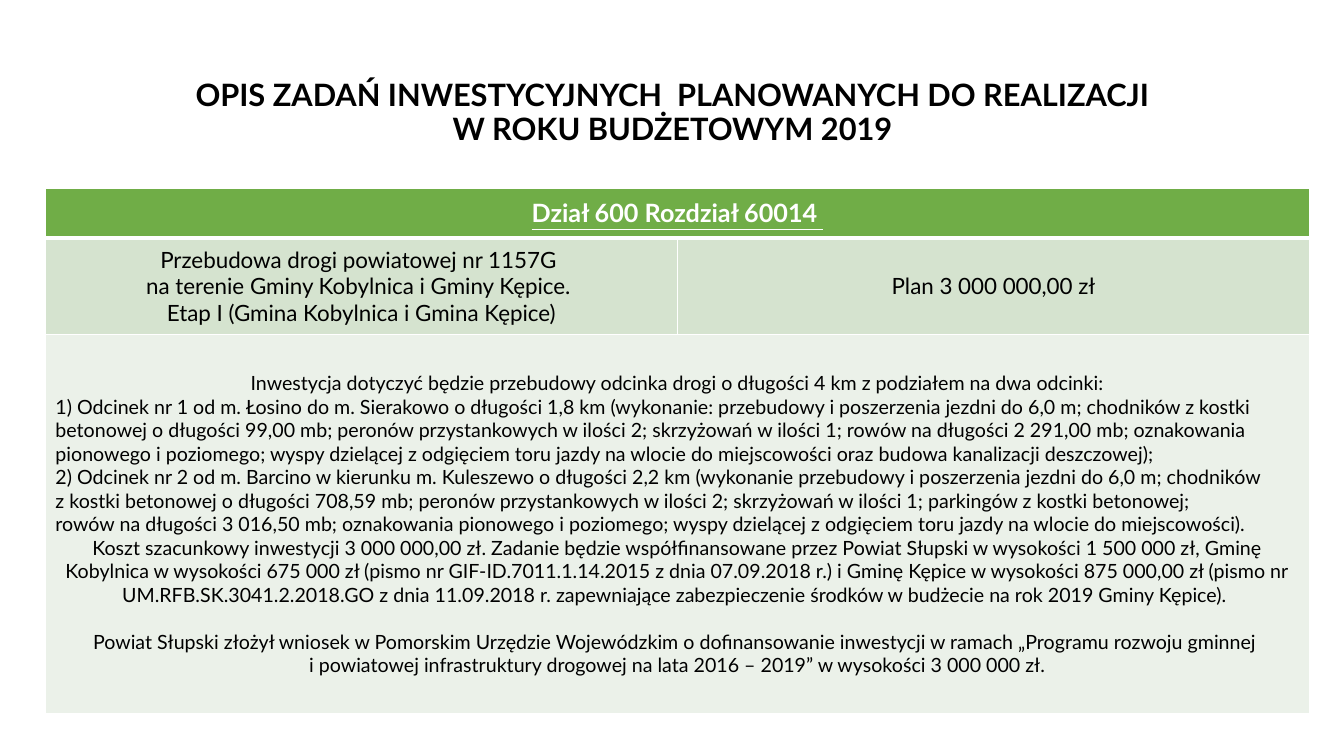
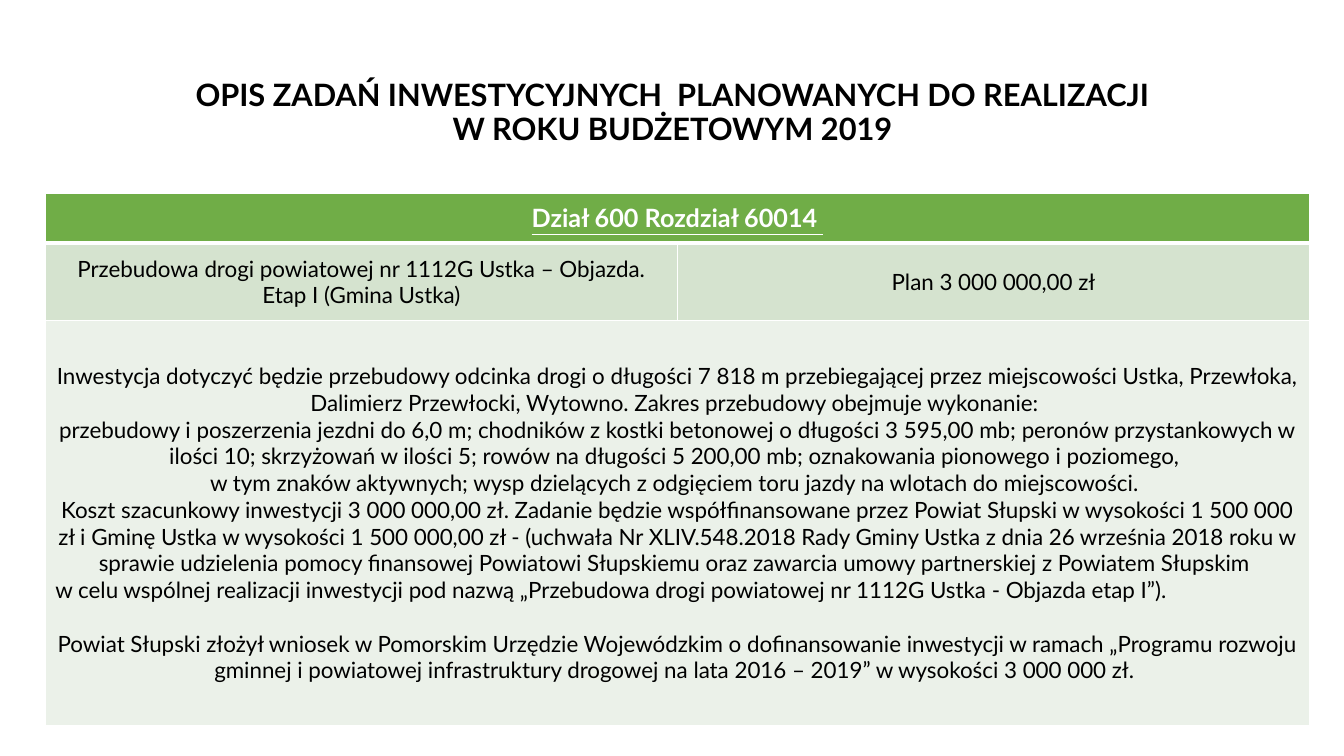
from copy import deepcopy

from lxml import etree
from pptx import Presentation
from pptx.dml.color import RGBColor
from pptx.enum.text import MSO_ANCHOR, PP_ALIGN
from pptx.oxml.ns import qn
from pptx.util import Inches, Pt

MIDDLE = MSO_ANCHOR.MIDDLE
CENTER, LEFT = PP_ALIGN.CENTER, PP_ALIGN.LEFT
FONT = "Lato"
COLORS = {
    "ink": "000000",
    "white": "FFFFFF",
    "head": "70AD47",
    "band": "D5E3CF",
    "body": "EBF1E9",
}
TITLE = "OPIS ZADAŃ INWESTYCYJNYCH  PLANOWANYCH DO REALIZACJI\nW ROKU BUDŻETOWYM 2019"
HEAD = "Dział 600 Rozdział 60014 "
PLAN = "Plan 3 000 000,00 zł"
TABLE_LEFT, COL_WIDTH = 0.45, 6.27

TASKS = [
    {
        "top": 1.87,
        "rows": [0.49, 0.96, 3.76],
        "size": 14,
        "left": (1, 2),
        "name": [
            "Przebudowa drogi powiatowej nr 1157G ",
            "na terenie Gminy Kobylnica i Gminy Kępice. ",
            "Etap I (Gmina Kobylnica i Gmina Kępice)",
        ],
        "body": [
            "Inwestycja dotyczyć będzie przebudowy odcinka drogi o długości 4 km z podziałem na dwa odcinki:",
            "1) Odcinek nr 1 od m. Łosino do m. Sierakowo o długości 1,8 km (wykonanie: przebudowy i poszerzenia "
            "jezdni do 6,0 m; chodników z kostki betonowej o długości 99,00 mb; peronów przystankowych w ilości 2; "
            "skrzyżowań w ilości 1; rowów na długości 2 291,00 mb; oznakowania pionowego i poziomego; wyspy "
            "dzielącej z odgięciem toru jazdy na wlocie do miejscowości oraz budowa kanalizacji deszczowej);",
            "2) Odcinek nr 2 od m. Barcino w kierunku m. Kuleszewo o długości 2,2 km (wykonanie przebudowy i "
            "poszerzenia jezdni do 6,0 m; chodników \nz kostki betonowej o długości 708,59 mb; peronów "
            "przystankowych w ilości 2; skrzyżowań w ilości 1; parkingów z kostki betonowej; \nrowów na długości "
            "3 016,50 mb; oznakowania pionowego i poziomego; wyspy dzielącej z odgięciem toru jazdy na wlocie "
            "do miejscowości).",
            "Koszt szacunkowy inwestycji 3 000 000,00 zł. Zadanie będzie współfinansowane przez Powiat Słupski "
            "w wysokości 1 500 000 zł, Gminę Kobylnica w wysokości 675 000 zł (pismo nr GIF-ID.7011.1.14.2015 "
            "z dnia 07.09.2018 r.) i Gminę Kępice w wysokości 875 000,00 zł (pismo nr UM.RFB.SK.3041.2.2018.GO "
            "z dnia 11.09.2018 r. zapewniające zabezpieczenie środków w budżecie na rok 2019 Gminy Kępice). ",
            "Powiat Słupski złożył wniosek w Pomorskim Urzędzie Wojewódzkim o dofinansowanie inwestycji w ramach "
            "„Programu rozwoju gminnej \ni powiatowej infrastruktury drogowej na lata 2016 – 2019” w wysokości "
            "3 000 000 zł.",
        ],
    },
    {
        "top": 1.92,
        "rows": [0.49, 0.77, 4.02],
        "size": 16,
        "left": (4,),
        "name": [
            "Przebudowa drogi powiatowej nr 1112G Ustka – Objazda.",
            "Etap I (Gmina Ustka)",
        ],
        "body": [
            "Inwestycja dotyczyć będzie przebudowy odcinka drogi o długości 7 818 m przebiegającej przez "
            "miejscowości Ustka, Przewłoka, Dalimierz Przewłocki, Wytowno. Zakres przebudowy obejmuje wykonanie: ",
            "przebudowy i poszerzenia jezdni do 6,0 m; chodników z kostki betonowej o długości 3 595,00 mb; "
            "peronów przystankowych w ilości 10; skrzyżowań w ilości 5; rowów na długości 5 200,00 mb; "
            "oznakowania pionowego i poziomego, ",
            "w tym znaków aktywnych; wysp dzielących z odgięciem toru jazdy na wlotach do miejscowości. ",
            "Koszt szacunkowy inwestycji 3 000 000,00 zł. Zadanie będzie współfinansowane przez Powiat Słupski "
            "w wysokości 1 500 000 zł i Gminę Ustka w wysokości 1 500 000,00 zł - (uchwała Nr XLIV.548.2018 Rady "
            "Gminy Ustka z dnia 26 września 2018 roku w sprawie udzielenia pomocy finansowej Powiatowi "
            "Słupskiemu oraz zawarcia umowy partnerskiej z Powiatem Słupskim ",
            "w celu wspólnej realizacji inwestycji pod nazwą „Przebudowa drogi powiatowej nr 1112G Ustka - "
            "Objazda etap I”).",
            "Powiat Słupski złożył wniosek w Pomorskim Urzędzie Wojewódzkim o dofinansowanie inwestycji w ramach "
            "„Programu rozwoju gminnej i powiatowej infrastruktury drogowej na lata 2016 – 2019” w wysokości "
            "3 000 000 zł. ",
        ],
    },
]


def color(name):
    return RGBColor.from_string(COLORS[name])


def write(frame, lines, size=16, ink="ink", bold=False, under=False, left=(), gap=0, spacing=None):
    frame.word_wrap = True
    for i, line in enumerate(lines):
        para = frame.add_paragraph() if i else frame.paragraphs[0]
        para.text = line
        para.alignment = LEFT if i in left else CENTER
        if spacing:
            para.line_spacing = spacing
        for run in para.runs:
            font = run.font
            font.name, font.size = FONT, Pt(size)
            font.bold, font.underline = bold, under
            font.color.rgb = color(ink)
        for br in para._p.findall(qn("a:br")):
            br.append(deepcopy(para.runs[0]._r.rPr))
    if gap:
        para.space_before = Pt(gap)


def border(cell, **widths):
    props = cell._tc.get_or_add_tcPr()
    for side in "LRTB":
        line = etree.SubElement(props, qn("a:ln" + side), w=str(Pt(widths.get(side, 1))))
        fill = etree.SubElement(line, qn("a:solidFill"))
        etree.SubElement(fill, qn("a:srgbClr"), val=COLORS["white"])


def add_title(slide):
    box = slide.shapes.add_textbox(Inches(0.92), Inches(0.4), Inches(11.5), Inches(1.45))
    box.text_frame.vertical_anchor = MIDDLE
    write(box.text_frame, [TITLE], size=22, bold=True, spacing=0.9)


def add_grid(slide, task):
    rows = task["rows"]
    grid = slide.shapes.add_table(
        len(rows), 2, Inches(TABLE_LEFT), Inches(task["top"]),
        Inches(2 * COL_WIDTH), Inches(sum(rows))
    ).table
    for col in grid.columns:
        col.width = Inches(COL_WIDTH)
    rules = [{"B": 3}, {"T": 3}, {}]
    for r, fill in enumerate(("head", "band", "body")):
        grid.rows[r].height = Inches(rows[r])
        for cell in grid.rows[r].cells:
            border(cell, **rules[r])
            cell.fill.solid()
            cell.fill.fore_color.rgb = color(fill)
            cell.vertical_anchor = MIDDLE
    for r in (0, 2):
        grid.cell(r, 0).merge(grid.cell(r, 1))
    size = task["size"]
    write(grid.cell(0, 0).text_frame, [HEAD], size=18, ink="white", bold=True, under=True)
    write(grid.cell(1, 0).text_frame, task["name"])
    write(grid.cell(1, 1).text_frame, [PLAN])
    write(grid.cell(2, 0).text_frame, task["body"], size=size, left=task["left"], gap=1.2 * size)


def main():
    deck = Presentation()
    deck.slide_width, deck.slide_height = Inches(13.33), Inches(7.5)
    for task in TASKS:
        slide = deck.slides.add_slide(deck.slide_layouts[6])
        add_title(slide)
        add_grid(slide, task)
    deck.save("out.pptx")


if __name__ == "__main__":
    main()
